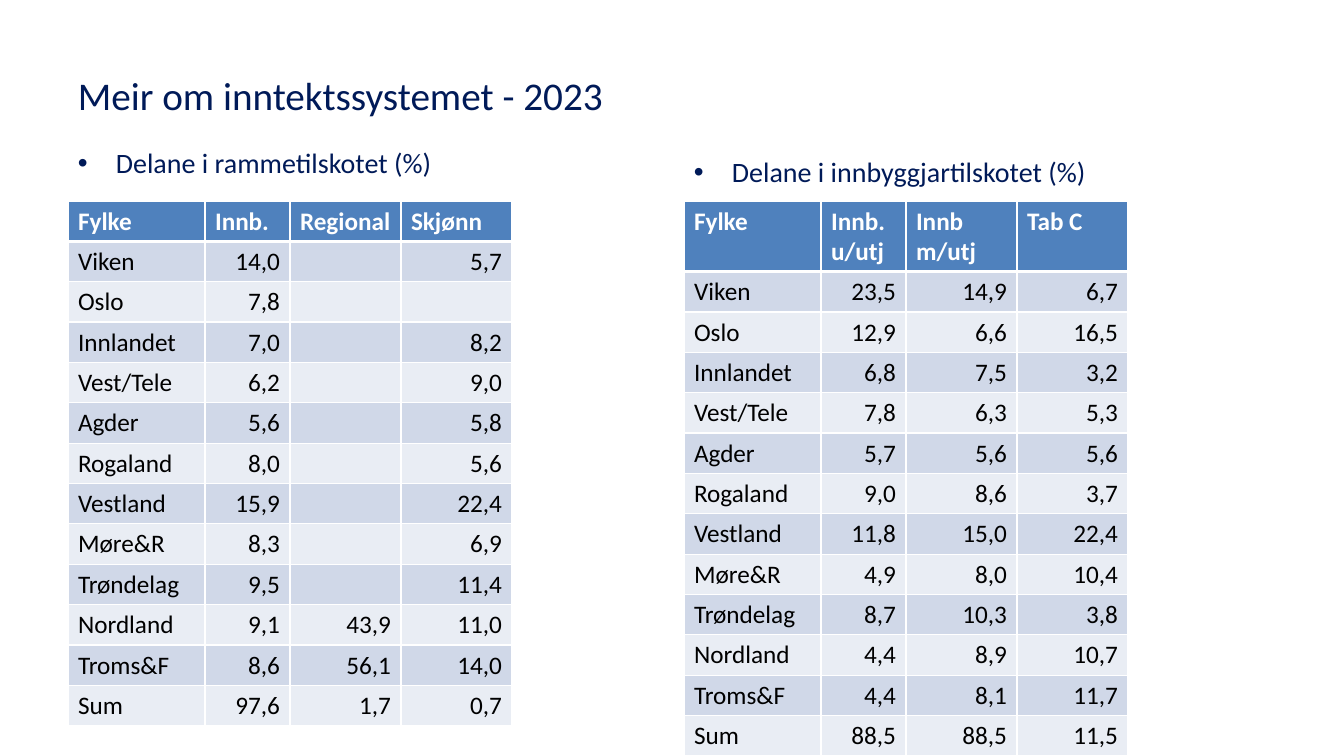
from lxml.etree import SubElement
from pptx import Presentation
from pptx.dml.color import RGBColor
from pptx.enum.text import MSO_ANCHOR, PP_ALIGN
from pptx.oxml.ns import qn
from pptx.util import Emu, Pt

NAVY = RGBColor(0x00, 0x1A, 0x58)
BLUE = RGBColor(0x4F, 0x81, 0xBD)
BAND_DARK = RGBColor(0xD0, 0xD8, 0xE8)
BAND_LIGHT = RGBColor(0xE9, 0xED, 0xF4)
WHITE = RGBColor(0xFF, 0xFF, 0xFF)
BLACK = RGBColor(0x00, 0x00, 0x00)

PAGE_WIDTH, PAGE_HEIGHT = 1344, 756
SCALE = 12192000 / PAGE_WIDTH

LEFT, RIGHT = 68, 684
TABLE_TOP = 201
COLUMN_WIDTHS = [137, 85, 111, 111]
ROW_HEIGHT = 40
BULLET_INDENT = 38

COUNTIES = ["Viken", "Oslo", "Innlandet", "Vest/Tele", "Agder", "Rogaland", "Vestland",
            "Møre&R", "Trøndelag", "Nordland", "Troms&F", "Sum"]

FRAME_HEADER = ["Fylke", "Innb.", "Regional", "Skjønn"]
FRAME_SHARES = [
    ("14,0", "", "5,7"), ("7,8", "", ""), ("7,0", "", "8,2"), ("6,2", "", "9,0"),
    ("5,6", "", "5,8"), ("8,0", "", "5,6"), ("15,9", "", "22,4"), ("8,3", "", "6,9"),
    ("9,5", "", "11,4"), ("9,1", "43,9", "11,0"), ("8,6", "56,1", "14,0"),
    ("97,6", "1,7", "0,7"),
]

RESIDENT_HEADER = ["Fylke", "Innb. u/utj", "Innb m/utj", "Tab C"]
RESIDENT_SHARES = [
    ("23,5", "14,9", "6,7"), ("12,9", "6,6", "16,5"), ("6,8", "7,5", "3,2"),
    ("7,8", "6,3", "5,3"), ("5,7", "5,6", "5,6"), ("9,0", "8,6", "3,7"),
    ("11,8", "15,0", "22,4"), ("4,9", "8,0", "10,4"), ("8,7", "10,3", "3,8"),
    ("4,4", "8,9", "10,7"), ("4,4", "8,1", "11,7"), ("88,5", "88,5", "11,5"),
]


def px(length):
    return Emu(round(length * SCALE))


class SlideBuilder:
    font_name = "Calibri"

    def __init__(self, page):
        self.page = page

    def add_span(self, paragraph, text, color, **formats):
        span = paragraph.add_run()
        span.text = text
        for name, value in {"name": self.font_name, **formats}.items():
            setattr(span.font, name, value)
        span.font.color.rgb = color

    def text(self, words, left, top, width, height, size, anchor=MSO_ANCHOR.TOP, bullet=None):
        box = self.page.shapes.add_textbox(px(left), px(top), px(width), px(height))
        frame = box.text_frame
        frame.word_wrap = True
        frame.vertical_anchor = anchor
        paragraph = frame.paragraphs[0]
        if bullet:
            properties = paragraph._p.get_or_add_pPr()
            properties.set("marL", str(px(BULLET_INDENT)))
            properties.set("indent", str(-px(BULLET_INDENT)))
            SubElement(properties, qn("a:buFont"), typeface="Arial")
            SubElement(properties, qn("a:buChar"), char=bullet)
        self.add_span(paragraph, words, NAVY, size=Pt(size))

    def borders(self, cell, row):
        widths = {"L": 1, "R": 1, "T": 3 if row == 1 else 1, "B": 3 if row == 0 else 1}
        properties = cell._tc.get_or_add_tcPr()
        for side, width in widths.items():
            line = SubElement(properties, qn(f"a:ln{side}"), w=str(Pt(width)))
            fill = SubElement(line, qn("a:solidFill"))
            SubElement(fill, qn("a:srgbClr"), val=str(WHITE))

    def table(self, header, shares, left, top):
        rows = [header] + [[county, *values] for county, values in zip(COUNTIES, shares)]
        grid = self.page.shapes.add_table(
            len(rows), len(header), px(left), px(top),
            px(sum(COLUMN_WIDTHS)), px(ROW_HEIGHT * len(rows))).table
        for column, width in zip(grid.columns, COLUMN_WIDTHS):
            column.width = px(width)
        for row, values in enumerate(rows):
            is_header = row == 0
            band = BLUE if is_header else BAND_DARK if row % 2 else BAND_LIGHT
            for column, value in enumerate(values):
                cell = grid.cell(row, column)
                self.borders(cell, row)
                cell.fill.solid()
                cell.fill.fore_color.rgb = band
                paragraph = cell.text_frame.paragraphs[0]
                if column and not is_header:
                    paragraph.alignment = PP_ALIGN.RIGHT
                if value:
                    self.add_span(paragraph, value, WHITE if is_header else BLACK,
                                  size=Pt(18), bold=is_header)


def main():
    deck = Presentation()
    deck.slide_width, deck.slide_height = px(PAGE_WIDTH), px(PAGE_HEIGHT)
    slide = SlideBuilder(deck.slides.add_slide(deck.slide_layouts[6]))

    # Title
    slide.text("Meir om inntektssystemet - 2023", LEFT, 32, 1210, 126, 28, MSO_ANCHOR.MIDDLE)

    # Headings above the tables
    slide.text("Delane i rammetilskotet (%)", LEFT, 141, 594, 406, 20, bullet="•")
    slide.text("Delane i innbyggjartilskotet (%)", RIGHT, 150, 594, 406, 20, bullet="•")

    # Tables of shares by county
    slide.table(FRAME_HEADER, FRAME_SHARES, LEFT, TABLE_TOP)
    slide.table(RESIDENT_HEADER, RESIDENT_SHARES, RIGHT, TABLE_TOP)

    deck.save("out.pptx")


if __name__ == "__main__":
    main()
